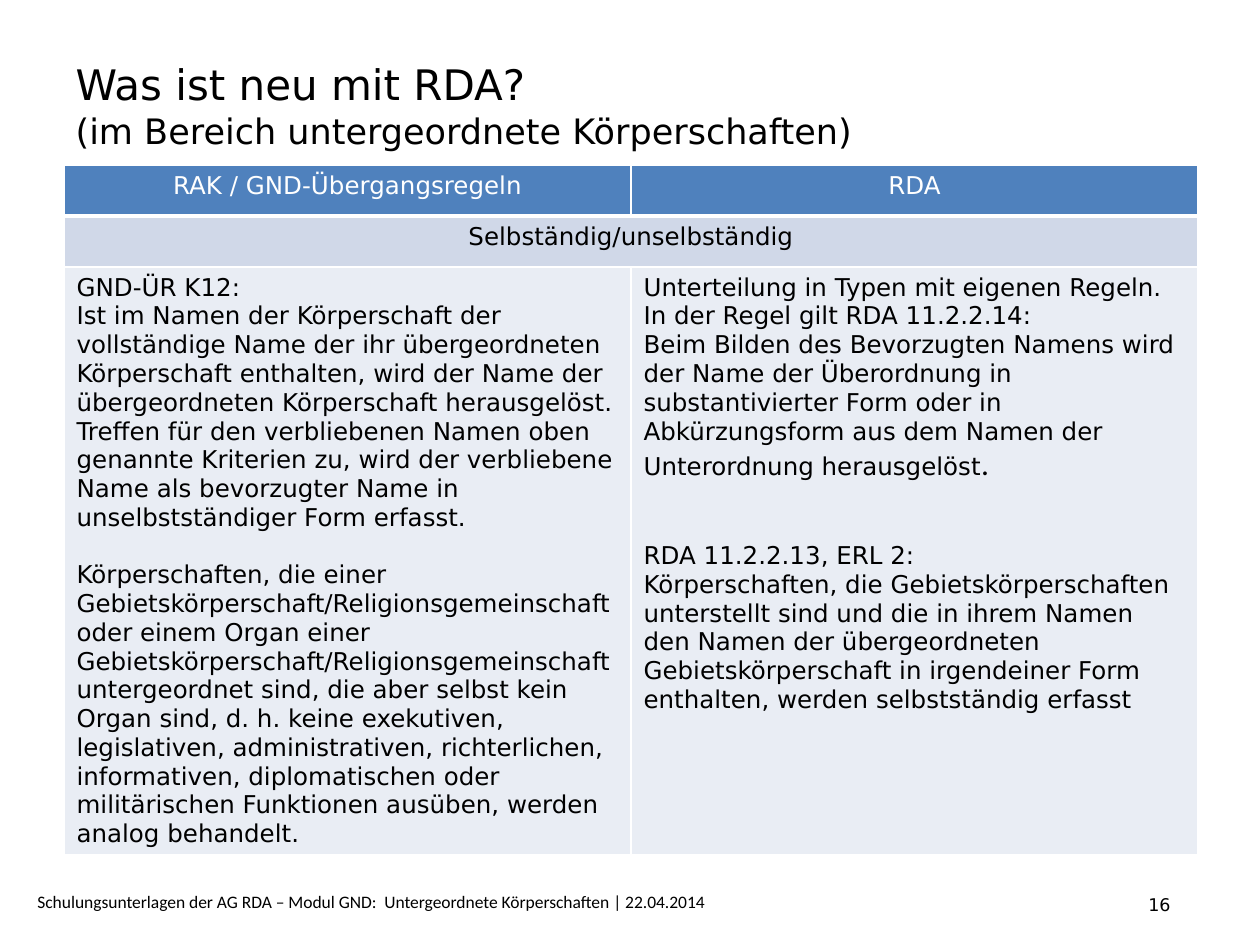
from lxml import etree
from pptx import Presentation, util as u
from pptx.dml import color
from pptx.enum import text
from pptx.oxml import ns

SANS = "DejaVu Sans"
BLACK, WHITE = "000000", "FFFFFF"
BLUE, BAND, PALE = "4F81BD", "D0D8E8", "E9EDF4"

LEFT_RULES = [
    ("GND-ÜR K12:", 0),
    ("Ist im Namen der Körperschaft der vollständige Name der ihr übergeordneten Körperschaft "
     "enthalten, wird der Name der übergeordneten Körperschaft herausgelöst. Treffen für den "
     "verbliebenen Namen oben genannte Kriterien zu, wird der verbliebene Name als bevorzugter "
     "Name in unselbstständiger Form erfasst.", 0),
    ("Körperschaften, die einer Gebietskörperschaft/Religionsgemeinschaft oder einem Organ einer "
     "Gebietskörperschaft/Religionsgemeinschaft untergeordnet sind, die aber selbst kein Organ "
     "sind, d. h. keine exekutiven, legislativen, administrativen, richterlichen, informativen, "
     "diplomatischen oder militärischen Funktionen ausüben, werden analog behandelt.", 16.4),
]
RIGHT_RULES = [
    ("Unterteilung in Typen mit eigenen Regeln.", 0),
    ("In der Regel gilt RDA 11.2.2.14:", 0),
    ("Beim Bilden des Bevorzugten Namens wird der Name der Überordnung in substantivierter Form "
     "oder in Abkürzungsform aus dem Namen der Unterordnung herausgelöst", 0),
    ("RDA 11.2.2.13, ERL 2:", 32.8),
    ("Körperschaften, die Gebietskörperschaften unterstellt sind und die in ihrem Namen den Namen "
     "der übergeordneten Gebietskörperschaft in irgendeiner Form enthalten, werden selbstständig "
     "erfasst", 0),
]


def px(length):
    return u.Emu(round(length * 914400 / 126))


def rgb(value):
    return color.RGBColor.from_string(value)


def style(font, size, name=SANS, fill=BLACK):
    font.size = u.Pt(size)
    font.name = name
    font.bold = False
    font.color.rgb = rgb(fill)


def add_title(slide, left, top, width, height):
    title = slide.shapes.title
    title.left, title.top, title.width, title.height = map(px, (left, top, width, height))
    frame = title.text_frame
    frame.auto_size = text.MSO_AUTO_SIZE.NONE
    frame.vertical_anchor = text.MSO_ANCHOR.MIDDLE
    paragraph = frame.paragraphs[0]
    paragraph.alignment = text.PP_ALIGN.LEFT
    style(paragraph.font, 24)
    paragraph.add_run().text = "Was ist neu mit RDA?"
    paragraph.add_line_break()
    subtitle = paragraph.add_run()
    subtitle.text = "(im Bereich untergeordnete Körperschaften)"
    subtitle.font.size = u.Pt(20)


def set_borders(cell, bottom):
    properties = cell._tc.get_or_add_tcPr()
    for index, side in enumerate("LRTB"):
        points = bottom if side == "B" else 1
        line = etree.Element(ns.qn(f"a:ln{side}"), w=str(u.Pt(points)))
        fill = etree.SubElement(line, ns.qn("a:solidFill"))
        etree.SubElement(fill, ns.qn("a:srgbClr"), val=WHITE)
        properties.insert(index, line)


def fill_cell(cell, paragraphs, font_color=BLACK, alignment=text.PP_ALIGN.LEFT):
    frame = cell.text_frame
    for index, (words, gap) in enumerate(paragraphs):
        paragraph = frame.paragraphs[0] if index == 0 else frame.add_paragraph()
        paragraph.text = words
        paragraph.alignment = alignment
        if gap:
            paragraph.space_before = u.Pt(gap)
        style(paragraph.font, 14, fill=font_color)


def add_comparison(slide, left, top, width, row_heights):
    frame = slide.shapes.add_table(
        len(row_heights), 2, px(left), px(top), px(width), px(sum(row_heights)))
    table = frame.table
    for column in table.columns:
        column.width = px(width // 2)
    for index, (row, height, fill) in enumerate(zip(table.rows, row_heights, (BLUE, BAND, PALE))):
        row.height = px(height)
        for cell in row.cells:
            cell.fill.solid()
            cell.fill.fore_color.rgb = rgb(fill)
            set_borders(cell, 3 if index == 0 else 1)
    table.cell(1, 0).merge(table.cell(1, 1))

    center = text.PP_ALIGN.CENTER
    for column, heading in enumerate(("RAK / GND-Übergangsregeln", "RDA")):
        fill_cell(table.cell(0, column), [(heading, 0)], WHITE, center)
    fill_cell(table.cell(1, 0), [("Selbständig/unselbständig", 0)], alignment=center)
    fill_cell(table.cell(2, 0), LEFT_RULES)
    fill_cell(table.cell(2, 1), RIGHT_RULES)
    period = table.cell(2, 1).text_frame.paragraphs[2].add_run()
    period.text = "."
    style(period.font, 18, "Calibri")


def add_footer_text(slide, left, top, width, height, words, font_name):
    box = slide.shapes.add_textbox(px(left), px(top), px(width), px(height))
    box.text_frame.word_wrap = True
    paragraph = box.text_frame.paragraphs[0]
    paragraph.text = words
    style(paragraph.font, 10, font_name)


def main():
    presentation = Presentation()
    presentation.slide_width, presentation.slide_height = px(1260), px(945)
    slide = presentation.slides.add_slide(presentation.slide_layouts[5])
    add_title(slide, 63, 26, 1134, 158)
    add_comparison(slide, 64, 165, 1134, (51, 51, 587))
    add_footer_text(
        slide, 25, 885, 883, 34,
        "Schulungsunterlagen der AG RDA – Modul GND:  Untergeordnete Körperschaften | 22.04.2014",
        "Calibri")
    add_footer_text(slide, 1136, 888, 100, 40, "16", SANS)
    presentation.save("out.pptx")


if __name__ == "__main__":
    main()
